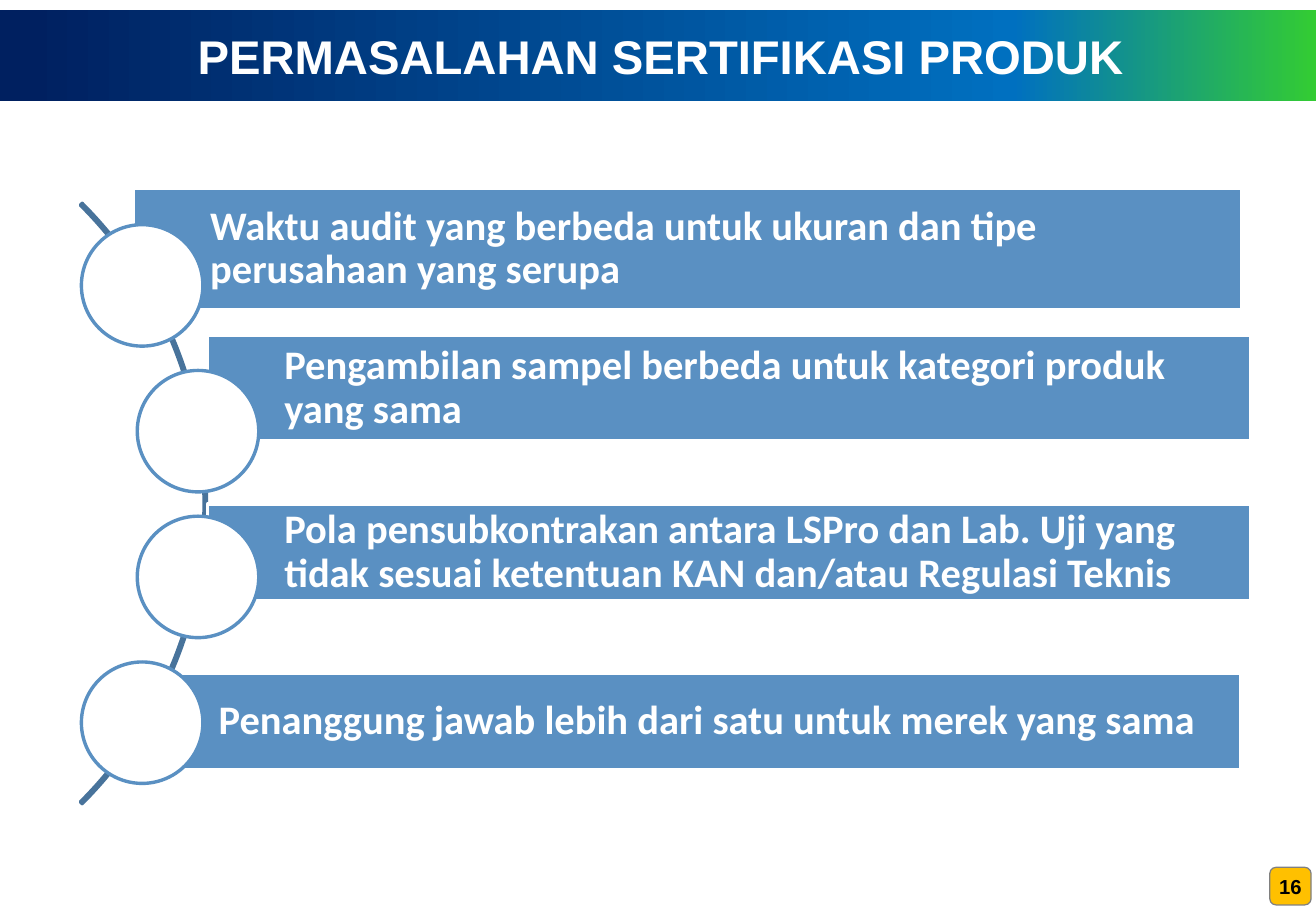
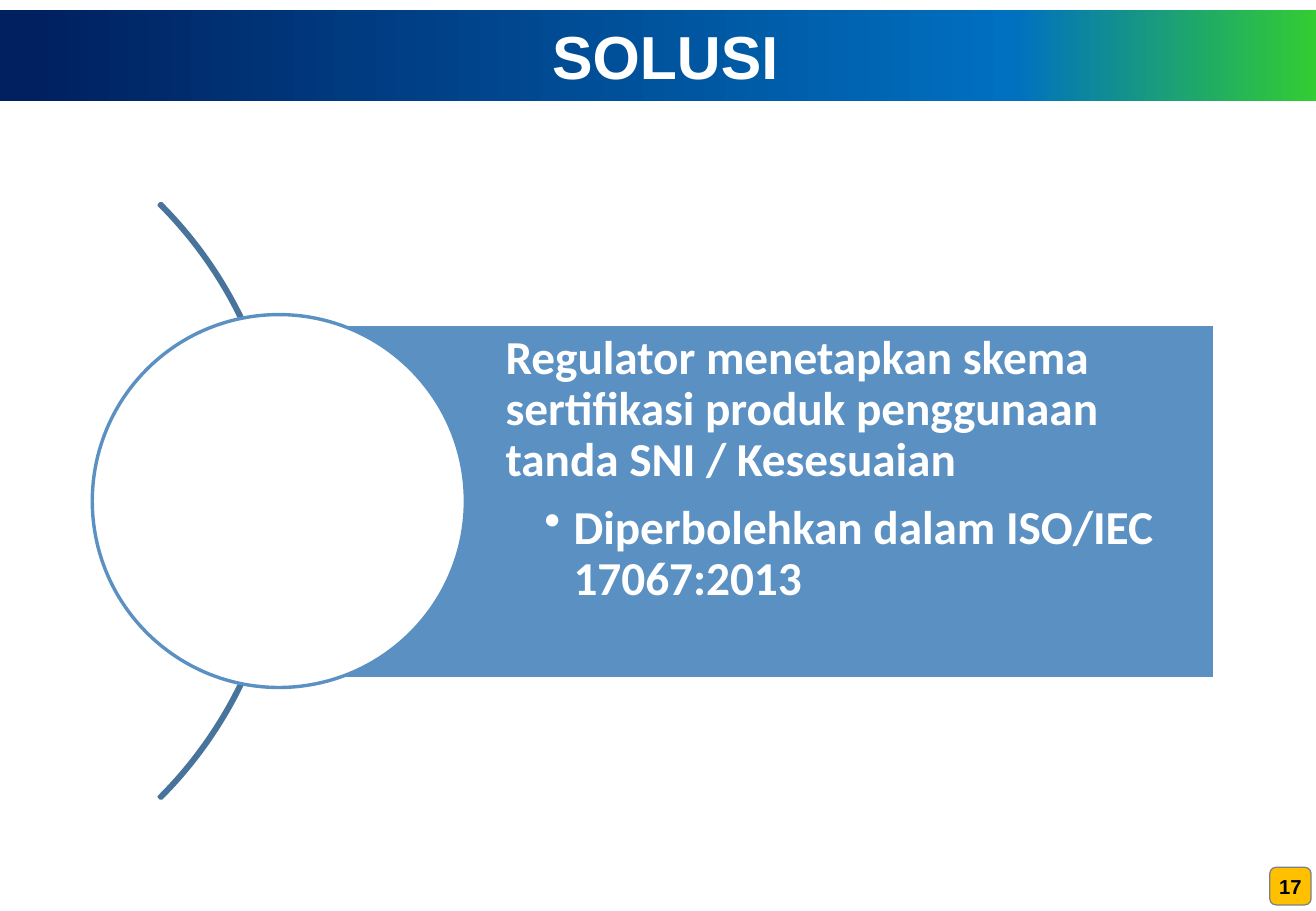
from copy import deepcopy

from lxml import etree
from pptx import Presentation
from pptx.dml.color import RGBColor
from pptx.enum.shapes import MSO_SHAPE
from pptx.enum.text import MSO_ANCHOR, PP_ALIGN
from pptx.oxml.ns import qn
from pptx.util import Inches, Pt

RECTANGLE = MSO_SHAPE.RECTANGLE
ROUNDED = MSO_SHAPE.ROUNDED_RECTANGLE
OVAL = MSO_SHAPE.OVAL
BLOCK_ARC = MSO_SHAPE.BLOCK_ARC
TOP, MIDDLE = MSO_ANCHOR.TOP, MSO_ANCHOR.MIDDLE
LEFT, CENTER = PP_ALIGN.LEFT, PP_ALIGN.CENTER

WHITE, BLACK = "FFFFFF", "000000"
BLUE, ARC_BLUE = "5A90C2", "48739B"
AMBER, GREY = "FFC000", "808080"
BAND_STOPS = [(0.02, "002060"), (0.77, "0070C0"), (1, "33CC33")]
HEADING_FONT, BODY_FONT = "Arial", "Calibri"
PAGE_WIDTH, PAGE_HEIGHT = 10.83, 7.5
BAND_TOP, BAND_HEIGHT = 0.08, 0.75
TITLE_RIGHT = 10.2

PROBLEMS = [
    ("Waktu audit yang berbeda untuk ukuran dan tipe perusahaan yang serupa",
     (1.1, 1.55, 9.12, 1), 0.67),
    ("Pengambilan sampel berbeda untuk kategori produk yang sama",
     (1.71, 2.76, 8.58, 0.87), 1.13),
    ("Pola pensubkontrakan antara LSPro dan Lab. Uji yang tidak sesuai "
     "ketentuan KAN dan/atau Regulasi Teknis",
     (1.71, 4.15, 8.58, 0.8), 1.13),
    ("Penanggung jawab lebih dari satu untuk merek yang sama",
     (1.17, 5.54, 9.04, 0.8), 0.67),
]
CIRCLE_TOP, CIRCLE_STEP = 1.85, 1.2


def color(code):
    return RGBColor.from_string(code)


def add_box(page, kind, box, fill=None, line=None, line_width=2):
    shape = page.shapes.add_shape(kind, *map(Inches, box))
    shape.shadow.inherit = False
    if fill:
        shape.fill.solid()
        shape.fill.fore_color.rgb = color(fill)
    else:
        shape.fill.background()
    if line:
        shape.line.color.rgb = color(line)
        shape.line.width = Pt(line_width)
    else:
        shape.line.fill.background()
    return shape


def set_frame(shape, insets, anchor=MIDDLE, wrap=True):
    frame = shape.text_frame
    frame.margin_left, frame.margin_top, frame.margin_right, frame.margin_bottom = map(Inches, insets)
    frame.vertical_anchor = anchor
    frame.word_wrap = wrap
    return frame


def write(para, text, size, font=BODY_FONT, code=WHITE, align=LEFT, spacing=0.9):
    para.alignment = align
    para.line_spacing = spacing
    span = para.add_run()
    span.text = text
    span.font.name = font
    span.font.size = Pt(size)
    span.font.bold = True
    span.font.color.rgb = color(code)


def add_bullet(para, left, hanging):
    props = para._p.get_or_add_pPr()
    props.set("marL", str(Inches(left)))
    props.set("indent", str(-Inches(hanging)))
    etree.SubElement(props, qn("a:buChar")).set("char", "•")


def add_band(page):
    band = add_box(page, RECTANGLE, (0, BAND_TOP, PAGE_WIDTH, BAND_HEIGHT))
    band.fill.gradient()
    band.fill.gradient_angle = 0
    stop_list = band._element.spPr.find(qn("a:gradFill")).find(qn("a:gsLst"))
    stop_list.append(deepcopy(stop_list[0]))
    for stop, (position, code) in zip(band.fill.gradient_stops, BAND_STOPS):
        stop.position = position
        stop.color.rgb = color(code)


def add_page(deck, title, title_left, title_size, number):
    page = deck.slides.add_slide(deck.slide_layouts[6])
    add_band(page)
    heading = page.shapes.add_textbox(
        *map(Inches, (title_left, BAND_TOP, TITLE_RIGHT - title_left, BAND_HEIGHT)))
    frame = set_frame(heading, (0.1, 0.05, 0.1, 0.05))
    write(frame.paragraphs[0], title, title_size, HEADING_FONT, align=CENTER, spacing=1.0)
    badge = add_box(page, ROUNDED, (10.45, 7.14, 0.34, 0.31), AMBER, GREY, 0.75)
    frame = set_frame(badge, (0.1, 0.1, 0.1, 0.1), wrap=False)
    write(frame.paragraphs[0], str(number), 12, HEADING_FONT, BLACK, CENTER, 1.0)
    return page


def add_arc(page, left, top, size):
    arc = add_box(page, BLOCK_ARC, (left, top, size, size), line=ARC_BLUE)
    for index, value in enumerate((189, 27, 0.003)):
        arc.adjustments[index] = value


def add_bar(page, box, insets, anchor=MIDDLE):
    return set_frame(add_box(page, RECTANGLE, box, BLUE, WHITE), insets, anchor)


def add_circle(page, left, top, size):
    add_box(page, OVAL, (left, top, size, size), WHITE, BLUE)


def add_problems(page):
    add_arc(page, -5.29, 0.65, 6.99)
    for row, (text, box, circle_left) in enumerate(PROBLEMS):
        frame = add_bar(page, box, (0.63, 0.07, 0.07, 0.07))
        write(frame.paragraphs[0], text, 24)
        add_circle(page, circle_left, CIRCLE_TOP + row * CIRCLE_STEP, 1)


def add_solution(page):
    add_arc(page, -4.59, 0.66, 6.93)
    frame = add_bar(page, (2.12, 2.67, 7.88, 2.92), (2.04, 0.08, 0.08, 0.08), TOP)
    statement = frame.paragraphs[0]
    write(statement, "Regulator menetapkan skema sertifikasi produk penggunaan "
          "tanda SNI / Kesesuaian", 28)
    statement.space_after = Pt(9.8)
    detail = frame.add_paragraph()
    detail.level = 1
    add_bullet(detail, 0.56, 0.24)
    write(detail, "Diperbolehkan dalam ISO/IEC 17067:2013", 28)
    add_circle(page, 0.76, 2.59, 3.07)


def main():
    deck = Presentation()
    deck.slide_width, deck.slide_height = Inches(PAGE_WIDTH), Inches(PAGE_HEIGHT)
    add_problems(add_page(deck, "PERMASALAHAN SERTIFIKASI PRODUK", 0.67, 28, 16))
    add_solution(add_page(deck, "SOLUSI", 0.75, 36, 17))
    deck.save("out.pptx")


if __name__ == "__main__":
    main()
